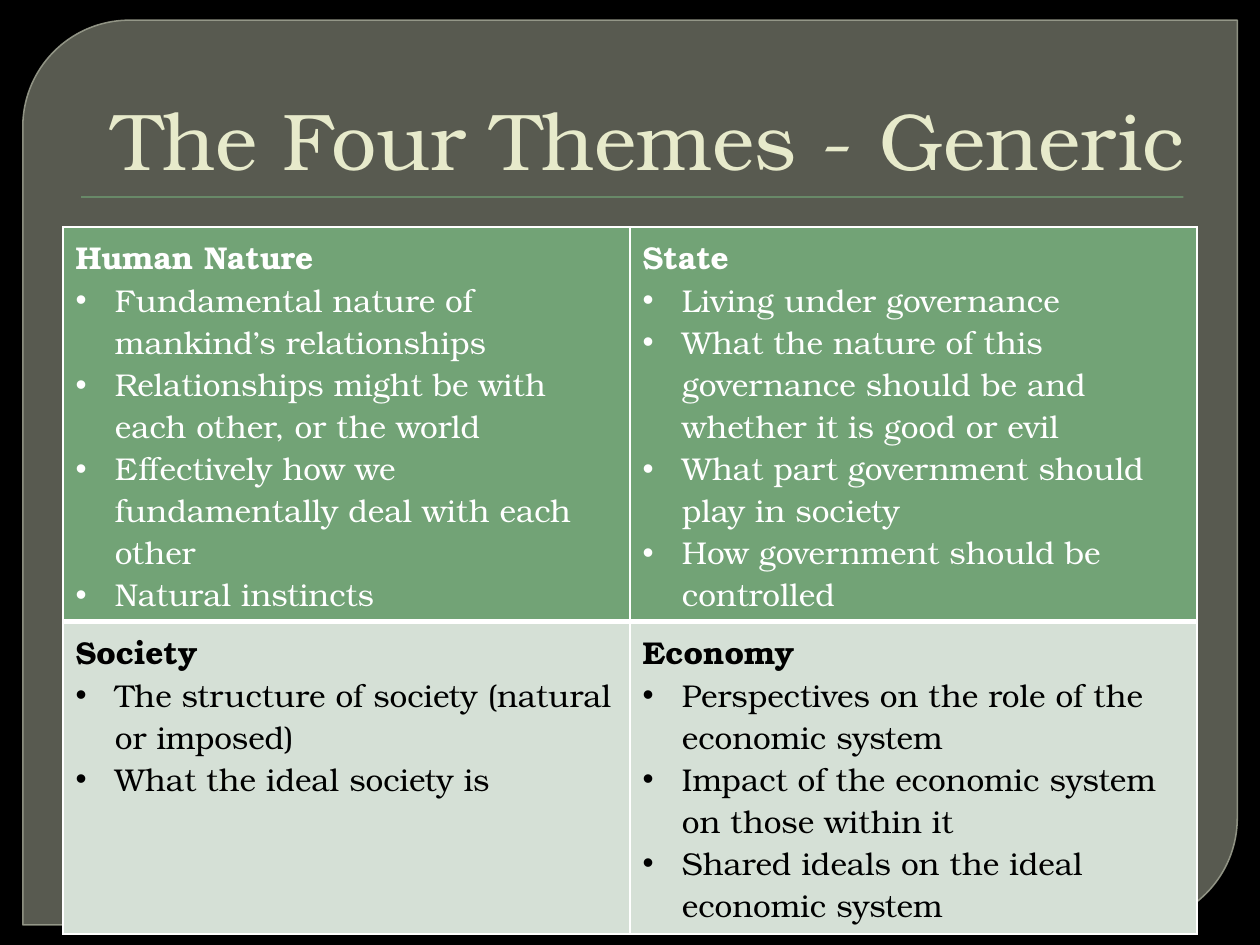
import pptx
import pptx.util
import pptx.dml.color
import pptx.enum.shapes
import pptx.enum.text
import pptx.oxml
import pptx.oxml.ns

Pt = pptx.util.Pt
RGBColor = pptx.dml.color.RGBColor
MSO_SHAPE = pptx.enum.shapes.MSO_SHAPE

BLACK = RGBColor(0x00, 0x00, 0x00)
WHITE = RGBColor(0xFF, 0xFF, 0xFF)
CREAM = RGBColor(0xE7, 0xEA, 0xCB)
OLIVE = RGBColor(0x88, 0x8B, 0x7B)
OUTLINE = RGBColor(0x9D, 0xA0, 0x90)
GREEN = RGBColor(0x72, 0xA3, 0x76)
PALE_GREEN = RGBColor(0xD5, 0xE0, 0xD6)

FONT = "TeX Gyre Bonum"
BULLET_INDENT = Pt(22.5)
ROW_HEIGHTS = (225, 178.5)
ROW_COLORS = ((GREEN, WHITE), (PALE_GREEN, BLACK))

THEMES = (
    (
        ("Human Nature", (
            "Fundamental nature of mankind’s relationships",
            "Relationships might be with each other, or the world",
            "Effectively how we fundamentally deal with each other",
            "Natural instincts",
        )),
        ("State", (
            "Living under governance",
            "What the nature of this governance should be and whether it is good or evil",
            "What part government should play in society",
            "How government should be controlled",
        )),
    ),
    (
        ("Society", (
            "The structure of society (natural or imposed)",
            "What the ideal society is",
        )),
        ("Economy", (
            "Perspectives on the role of the economic system",
            "Impact of the economic system on those within it",
            "Shared ideals on the ideal economic system",
        )),
    ),
)


def parse_drawing(tag, content="", attributes=""):
    namespace = pptx.oxml.ns.nsdecls("a")
    return pptx.oxml.parse_xml(f"<a:{tag} {namespace} {attributes}>{content}</a:{tag}>")


def style_paragraph(paragraph, size, color, bold=False):
    for run in paragraph.runs:
        run.font.name = FONT
        run.font.size = Pt(size)
        run.font.bold = bold
        run.font.color.rgb = color


def set_opacity(color_format_parent, percent):
    color = color_format_parent.find(".//" + pptx.oxml.ns.qn("a:srgbClr"))
    color.append(parse_drawing("alpha", attributes=f'val="{percent * 1000}"'))


def add_backdrop(slide):
    backdrop = slide.shapes.add_shape(
        MSO_SHAPE.ROUND_2_DIAG_RECTANGLE, Pt(13), Pt(11.5), Pt(694), Pt(517))
    backdrop.adjustments[0] = 0.118
    backdrop.adjustments[1] = 0
    backdrop.shadow.inherit = False
    backdrop.fill.solid()
    backdrop.fill.fore_color.rgb = OLIVE
    backdrop.line.color.rgb = OUTLINE
    backdrop.line.width = Pt(0.87)
    properties = backdrop._element.spPr
    set_opacity(properties.find(pptx.oxml.ns.qn("a:solidFill")), 65)
    set_opacity(properties.find(pptx.oxml.ns.qn("a:ln")), 88)
    slide.shapes._spTree.insert(2, backdrop._element)


def add_title_rule(slide):
    rule = slide.shapes.add_shape(
        MSO_SHAPE.RECTANGLE, Pt(46.3), Pt(112.2), Pt(630), Pt(0.72))
    rule.shadow.inherit = False
    rule.fill.solid()
    rule.fill.fore_color.rgb = GREEN
    rule.line.fill.background()
    effects = rule._element.spPr.find(pptx.oxml.ns.qn("a:effectLst"))
    effects.append(parse_drawing(
        "outerShdw",
        '<a:srgbClr val="000000"><a:alpha val="75000"/></a:srgbClr>',
        'blurRad="12700" dist="12700" dir="5400000"'))


def write_title(slide, text):
    title = slide.shapes.title
    title.left, title.top, title.width, title.height = Pt(36), Pt(20), Pt(648), Pt(90)
    frame = title.text_frame
    frame.text = text
    frame.auto_size = pptx.enum.text.MSO_AUTO_SIZE.NONE
    frame.vertical_anchor = pptx.enum.text.MSO_ANCHOR.BOTTOM
    heading = frame.paragraphs[0]
    heading.alignment = pptx.enum.text.PP_ALIGN.RIGHT
    style_paragraph(heading, 46, CREAM)


def set_borders(cell, widths):
    properties = cell._tc.get_or_add_tcPr()
    for position, (side, width) in enumerate(widths.items()):
        properties.insert(position, parse_drawing(
            side, f'<a:solidFill><a:srgbClr val="{WHITE}"/></a:solidFill>',
            f'w="{Pt(width)}"'))


def write_theme(cell, heading, points, color):
    frame = cell.text_frame
    frame.text = heading
    style_paragraph(frame.paragraphs[0], 18, color, bold=True)
    for point in points:
        paragraph = frame.add_paragraph()
        paragraph.text = point
        style_paragraph(paragraph, 18, color)
        properties = paragraph._p.get_or_add_pPr()
        properties.set("marL", str(BULLET_INDENT))
        properties.set("indent", str(-BULLET_INDENT))
        properties.append(parse_drawing("buFont", attributes='typeface="Arial"'))
        properties.append(parse_drawing("buChar", attributes='char="•"'))


def add_theme_table(slide):
    table = slide.shapes.add_table(
        2, 2, Pt(36), Pt(129.6), Pt(648), Pt(sum(ROW_HEIGHTS))).table
    for row_index, themes in enumerate(THEMES):
        table.rows[row_index].height = Pt(ROW_HEIGHTS[row_index])
        background, text_color = ROW_COLORS[row_index]
        top, bottom = ((1, 3), (3, 1))[row_index]
        for column_index, (heading, points) in enumerate(themes):
            cell = table.cell(row_index, column_index)
            cell.fill.solid()
            cell.fill.fore_color.rgb = background
            set_borders(cell, {"lnL": 1, "lnR": 1, "lnT": top, "lnB": bottom})
            write_theme(cell, heading, points, text_color)


def main():
    presentation = pptx.Presentation()
    presentation.slide_width = Pt(720)
    presentation.slide_height = Pt(540)
    slide = presentation.slides.add_slide(presentation.slide_layouts[5])
    slide.background.fill.solid()
    slide.background.fill.fore_color.rgb = BLACK
    add_backdrop(slide)
    add_title_rule(slide)
    write_title(slide, "The Four Themes - Generic")
    add_theme_table(slide)
    presentation.save("out.pptx")


if __name__ == "__main__":
    main()
